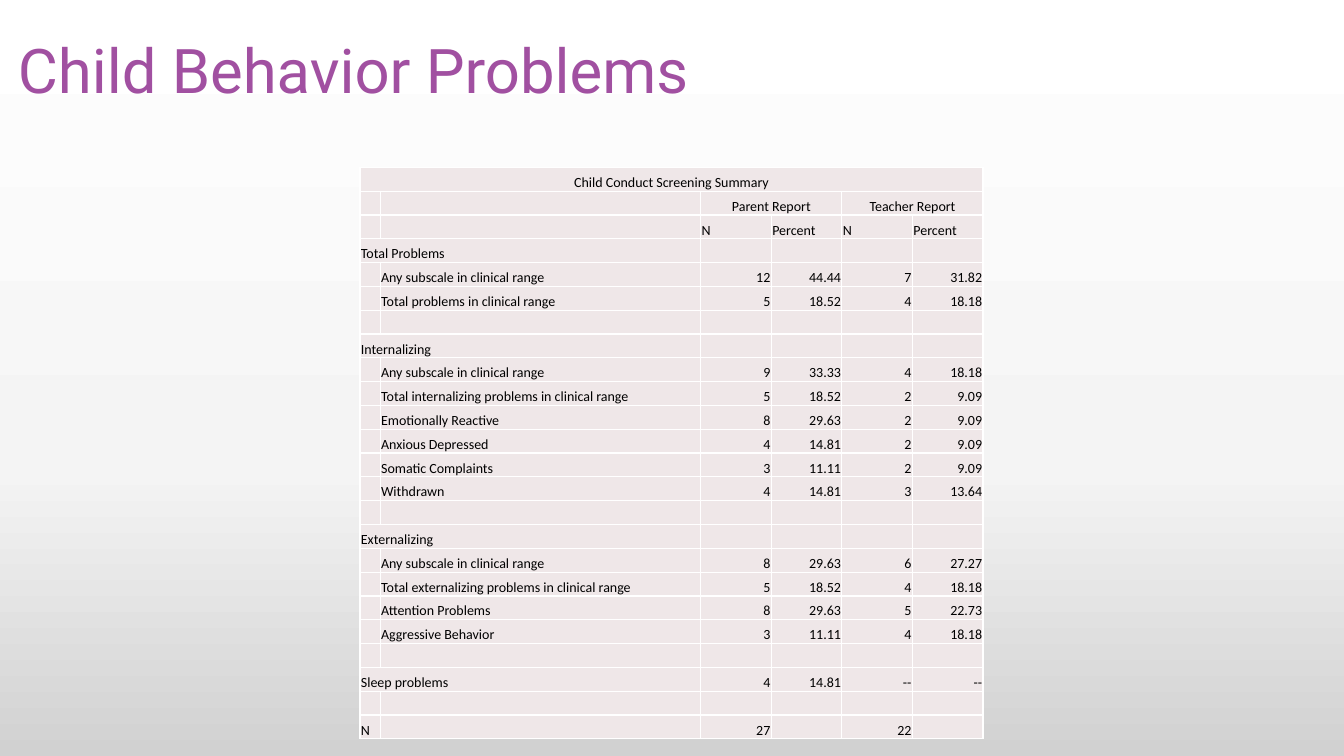
import copy
import pptx
import pptx.util
import pptx.dml.color
import pptx.enum.text
import pptx.oxml
import pptx.oxml.ns
from lxml import etree

COLORS = {"title": "A150A1", "text": "000000", "cell": "EFE7E8", "border": "FFFFFF"}
BACKGROUND_STOPS = [(0, "FFFFFF"), (0.62, "F4F4F4"), (1, "D1D1D1")]
TITLE = "Child Behavior Problems"
CAPTION = "Child Conduct Screening Summary"
REPORTS = ["Parent Report", "Teacher Report"]
MEASURES = ["N", "Percent"]
ANY_SUBSCALE = "Any subscale in clinical range"
SECTIONS = [
    ("Total Problems", [
        (ANY_SUBSCALE, "12", "44.44", "7", "31.82"),
        ("Total problems in clinical range", "5", "18.52", "4", "18.18"),
    ]),
    ("Internalizing", [
        (ANY_SUBSCALE, "9", "33.33", "4", "18.18"),
        ("Total internalizing problems in clinical range", "5", "18.52", "2", "9.09"),
        ("Emotionally Reactive", "8", "29.63", "2", "9.09"),
        ("Anxious Depressed", "4", "14.81", "2", "9.09"),
        ("Somatic Complaints", "3", "11.11", "2", "9.09"),
        ("Withdrawn", "4", "14.81", "3", "13.64"),
    ]),
    ("Externalizing", [
        (ANY_SUBSCALE, "8", "29.63", "6", "27.27"),
        ("Total externalizing problems in clinical range", "5", "18.52", "4", "18.18"),
        ("Attention Problems", "8", "29.63", "5", "22.73"),
        ("Aggressive Behavior", "3", "11.11", "4", "18.18"),
    ]),
]
SLEEP = ("Sleep problems", "", "4", "14.81", "--", "--")
SAMPLE_SIZE = ("N", "", "27", "", "22", "")

SLIDE_WIDTH, SLIDE_HEIGHT = 13.33, 7.5
TABLE_LEFT, TABLE_TOP, TABLE_HEIGHT = 3.57, 1.66, 5.67
COLUMN_WIDTHS = [0.2, 3.18] + [0.7] * 4
HEADER_ROWS = 3
BLANK_ROW = ("",) * len(COLUMN_WIDTHS)

inches = pptx.util.Inches
points = pptx.util.Pt
Align = pptx.enum.text.PP_ALIGN
Anchor = pptx.enum.text.MSO_ANCHOR


def rgb(value):
    return pptx.dml.color.RGBColor.from_string(value)


def add_run(paragraph, text, font_name, size, color):
    run = paragraph.add_run()
    run.text = text
    run.font.name = font_name
    run.font.size = points(size)
    run.font.color.rgb = rgb(color)


def paint_background(slide):
    fill = slide.background.fill
    fill.gradient()
    fill.gradient_angle = 270
    stop_list = slide.element.find(".//" + pptx.oxml.ns.qn("a:gsLst"))
    stop_list.append(copy.deepcopy(stop_list[0]))
    for stop, (position, color) in zip(fill.gradient_stops, BACKGROUND_STOPS):
        stop.position = position
        stop.color.rgb = rgb(color)


def add_title(slide):
    box = slide.shapes.add_textbox(inches(0.08), 0, inches(11.5), inches(1.45))
    frame = box.text_frame
    frame.word_wrap = True
    frame.vertical_anchor = Anchor.MIDDLE
    paragraph = frame.paragraphs[0]
    paragraph.line_spacing = 0.9
    add_run(paragraph, TITLE, "Roboto", 44, COLORS["title"])


def table_rows():
    rows = [
        (CAPTION,) + BLANK_ROW[1:],
        ("", "", REPORTS[0], "", REPORTS[1], ""),
        ("", "", *MEASURES, *MEASURES),
    ]
    spans = [(0, 0, 6), (1, 2, 2), (1, 4, 2)]
    for heading, items in SECTIONS:
        spans.append((len(rows), 0, 2))
        rows.append((heading,) + BLANK_ROW[1:])
        rows.extend(("",) + item for item in items)
        rows.append(BLANK_ROW)
    spans.append((len(rows), 0, 2))
    rows.extend([SLEEP, BLANK_ROW, SAMPLE_SIZE])
    return rows, spans


def set_borders(cell):
    properties = cell._tc.get_or_add_tcPr()
    for index, side in enumerate(("lnL", "lnR", "lnT", "lnB")):
        line = pptx.oxml.parse_xml(
            f'<a:{side} {pptx.oxml.ns.nsdecls("a")} w="{points(1)}"><a:solidFill>'
            f'<a:srgbClr val="{COLORS["border"]}"/></a:solidFill></a:{side}>')
        properties.insert(index, line)


def fill_cell(cell, text, alignment):
    cell.margin_left = cell.margin_right = cell.margin_top = inches(0.01)
    cell.margin_bottom = 0
    cell.vertical_anchor = Anchor.BOTTOM
    cell.fill.solid()
    cell.fill.fore_color.rgb = rgb(COLORS["cell"])
    set_borders(cell)
    paragraph = cell.text_frame.paragraphs[0]
    paragraph.alignment = alignment
    if text:
        add_run(paragraph, text, "Calibri", 10, COLORS["text"])
    else:
        etree.SubElement(paragraph._p, pptx.oxml.ns.qn("a:endParaRPr"), sz="1000")


def add_checklist(slide):
    rows, spans = table_rows()
    frame = slide.shapes.add_table(
        len(rows), len(COLUMN_WIDTHS), inches(TABLE_LEFT), inches(TABLE_TOP),
        inches(sum(COLUMN_WIDTHS)), inches(TABLE_HEIGHT))
    table = frame.table
    table.first_row = table.horz_banding = False
    for column, width in zip(table.columns, COLUMN_WIDTHS):
        column.width = inches(width)
    for row in table.rows:
        row.height = inches(TABLE_HEIGHT / len(rows))
    for row, column, width in spans:
        table.cell(row, column).merge(table.cell(row, column + width - 1))
    for row, values in enumerate(rows):
        for column, text in enumerate(values):
            if row < HEADER_ROWS - 1:
                alignment = Align.CENTER
            elif row >= HEADER_ROWS and column >= 2:
                alignment = Align.RIGHT
            else:
                alignment = Align.LEFT
            fill_cell(table.cell(row, column), text, alignment)


def main():
    presentation = pptx.Presentation()
    presentation.slide_width = inches(SLIDE_WIDTH)
    presentation.slide_height = inches(SLIDE_HEIGHT)
    slide = presentation.slides.add_slide(presentation.slide_layouts[6])
    paint_background(slide)
    add_title(slide)
    add_checklist(slide)
    presentation.save("out.pptx")


if __name__ == "__main__":
    main()
